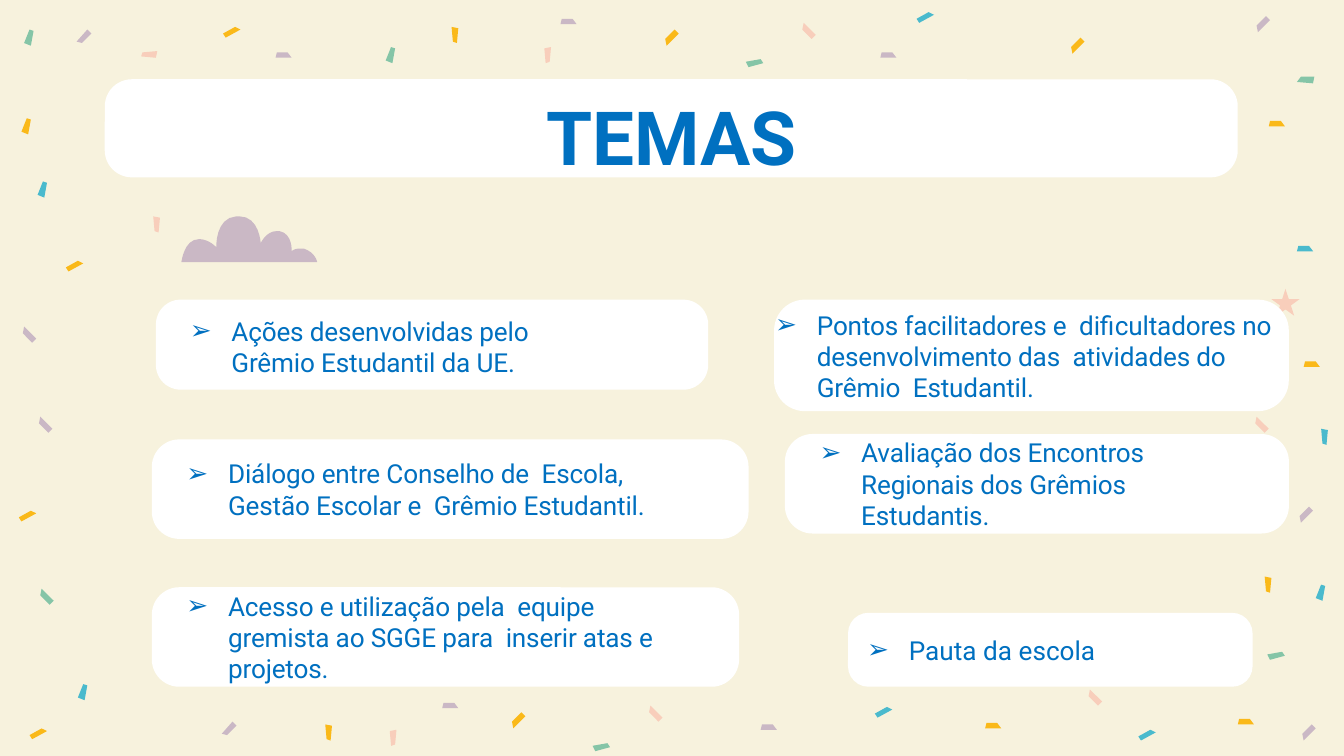
from pptx import Presentation
from pptx.dml.color import RGBColor
from pptx.enum import shapes as kinds, text as txt
from pptx.oxml import parse_xml
from pptx.oxml.ns import nsdecls
from pptx.util import Inches, Pt

CREAM = RGBColor(0xF7, 0xF2, 0xDD)
WHITE = RGBColor(0xFF, 0xFF, 0xFF)
BLUE = RGBColor(0x00, 0x70, 0xC0)
MAUVE = RGBColor(0xCA, 0xB8, 0xC5)
PINK = RGBColor(0xF8, 0xCE, 0xBB)
YELLOW = RGBColor(0xFA, 0xB9, 0x19)
GREEN = RGBColor(0x85, 0xC5, 0xA7)
TEAL = RGBColor(0x4A, 0xBA, 0xCD)

FONT = "Roboto"
CORNER = 0.276

# Outlines of the confetti pieces, around their centres.
FLAT = [(-.05, -.02), (.03, -.02), (.06, .02), (-.06, .02)]
FALLING = [(.03, .06), (-.04, -.01), (-.03, -.06), (.06, .03)]
RISING = [(x, -y) for x, y in FALLING]
RISING_BACK = [(.06, -.03), (-.01, .04), (-.05, .03), (.03, -.06)]
GENTLE = [(-.06, .02), (.03, -.03), (.07, -.01), (-.04, .05)]
LEANING = [(-.04, .04), (0, -.06), (.03, -.05), (.01, .06)]
UPRIGHT = [(.03, -.05), (.02, .06), (-.01, .05), (-.02, -.06)]
UPRIGHT_BACK = [(-x, y) for x, y in UPRIGHT]
LEVEL = [(-.04, .04), (.07, .01), (.05, -.02), (-.06, 0)]
TIPPED = [(.07, -.02), (-.03, -.02), (-.06, .02), (.06, .03)]
WIDE = [(.05, .03), (-.06, .02), (-.05, -.01), (.06, -.02)]

CONFETTI = [
    (FLAT, MAUVE, [(4.23, .16), (2.11, .41), (6.61, .41), (3.35, 5.25), (5.72, 5.41)]),
    (FLAT, YELLOW, [(9.5, .92), (9.76, 2.71), (7.39, 5.4), (9.27, 5.37)]),
    (FLAT, TEAL, [(9.71, 1.85)]),
    (FALLING, MAUVE, [(.33, 3.16), (.21, 2.49)]),
    (FALLING, PINK, [(6.01, .23), (9.38, 3.16), (4.87, 5.31), (8.14, 5.19)]),
    (FALLING, GREEN, [(.34, 4.44)]),
    (RISING, YELLOW, [(4.99, .28), (8.01, .34), (3.85, 5.36)]),
    (RISING, MAUVE, [(9.39, .18), (9.71, 3.83), (9.73, 5.45)]),
    (RISING_BACK, MAUVE, [(.62, .28), (1.7, 5.43)]),
    (GENTLE, YELLOW, [(1.72, .23), (.55, 1.97), (.2, 3.83), (.28, 5.45)]),
    (GENTLE, TEAL, [(6.88, .12), (6.57, 5.29), (8.53, 5.46)]),
    (LEANING, YELLOW, [(.2, .94)]),
    (LEANING, GREEN, [(.22, .28), (2.91, .41)]),
    (LEANING, TEAL, [(.32, 1.41), (.62, 5.15), (9.83, 4.41)]),
    (UPRIGHT, YELLOW, [(3.38, .26), (2.44, 5.45), (9.43, 4.35)]),
    (UPRIGHT, PINK, [(1.16, 1.67)]),
    (UPRIGHT, TEAL, [(9.85, 3.25)]),
    (UPRIGHT_BACK, PINK, [(4.08, .41), (2.93, 5.49)]),
    (LEVEL, GREEN, [(5.61, .46), (4.47, 5.55), (9.49, 4.87)]),
    (TIPPED, GREEN, [(9.71, .59)]),
    (WIDE, PINK, [(1.11, .4)]),
]

# Bézier segments, from the top of the cloud: two handles and an end point.
CLOUD_BOX = (1.35, 1.61, 1.02, .34)
CLOUD_TOP = (.43, 0)
CLOUD_CURVES = [
    ((.42, 0), (.42, 0), (.41, 0)), ((.25, .01), (.26, .23), (.26, .23)),
    ((.21, .18), (.16, .17), (.13, .17)), ((.02, .17), (0, .34), (0, .34)),
    ((.34, .34), (.68, .34), (1.01, .34)), ((1.01, .34), (1, .27), (.91, .24)),
    ((.89, .24), (.88, .24), (.88, .24)), ((.84, .24), (.82, .26), (.82, .26)),
    ((.82, .26), (.83, .13), (.73, .11)), ((.72, .11), (.72, .11), (.71, .11)),
    ((.63, .11), (.59, .2), (.59, .2)), ((.59, .2), (.58, 0), (.43, 0)),
]

# Box, text, and the insets that set where the lines break.
THEMES = [
    ((1.16, 2.23, 4.11, .67), "Ações desenvolvidas pelo Grêmio Estudantil da UE.",
     dict(right=.92, top=.13)),
    ((1.13, 3.27, 4.44, .74),
     "Diálogo entre Conselho de  Escola, Gestão Escolar e  Grêmio Estudantil.",
     dict(right=.45)),
    ((1.13, 4.37, 4.37, .74),
     "Acesso e utilização pela  equipe gremista ao SGGE para  inserir atas e projetos.",
     dict(right=.4)),
    ((5.84, 3.23, 3.75, .74),
     "Avaliação dos Encontros Regionais dos Grêmios Estudantis.", dict(right=.65)),
    ((6.31, 4.56, 3.01, .55), "Pauta da escola", dict(margin=.31, spacing=0)),
]


def paint(shape, color):
    shape.fill.solid()
    shape.fill.fore_color.rgb = color
    shape.line.fill.background()
    shape.shadow.inherit = False


def add_outline(slide, points, color):
    start, *rest = [(Inches(x), Inches(y)) for x, y in points]
    builder = slide.shapes.build_freeform(*start)
    builder.add_line_segments(rest, close=True)
    paint(builder.convert_to_shape(), color)


def add_preset(slide, kind, box, color):
    shape = slide.shapes.add_shape(kind, *map(Inches, box))
    paint(shape, color)
    return shape


def add_card(slide, box):
    card = add_preset(slide, kinds.MSO_SHAPE.ROUNDED_RECTANGLE, box, WHITE)
    card.adjustments[0] = CORNER
    return card


def write(shape, content, size=14, bold=False, align=txt.PP_ALIGN.LEFT,
          anchor=txt.MSO_ANCHOR.MIDDLE, left=.1, top=.1, right=.1, bottom=.1,
          bullet=True, margin=.41, spacing=-10):
    """Fill the shape with one paragraph; spacing is in hundredths of a point."""
    frame = shape.text_frame
    frame.word_wrap = True
    frame.vertical_anchor = anchor
    frame.margin_left, frame.margin_top = Inches(left), Inches(top)
    frame.margin_right, frame.margin_bottom = Inches(right), Inches(bottom)
    paragraph = frame.paragraphs[0]
    paragraph.alignment = align
    run = paragraph.add_run()
    run.text = content
    run.font.name, run.font.size, run.font.bold = FONT, Pt(size), bold
    run.font.color.rgb = BLUE
    if spacing:
        run._r.get_or_add_rPr().set("spc", str(spacing))
    if bullet:
        props = paragraph._p.get_or_add_pPr()
        props.set("marL", str(Inches(margin)))
        props.set("indent", str(Inches(-.31)))
        ns = nsdecls("a")
        for xml in (f'<a:buClr {ns}><a:srgbClr val="{BLUE}"/></a:buClr>',
                    f'<a:buFont {ns} typeface="{FONT}"/>',
                    f'<a:buChar {ns} char="➢"/>'):
            props.append(parse_xml(xml))


def add_confetti(slide):
    for outline, color, centres in CONFETTI:
        for cx, cy in centres:
            add_outline(slide, [(cx + x, cy + y) for x, y in outline], color)
    star = add_preset(slide, kinds.MSO_SHAPE.STAR_5_POINT, (9.46, 2.15, .21, .2), PINK)
    star.adjustments[0] = .191


def add_cloud(slide, box, steps=8):
    """Trace the Bézier curves of the cloud with short straight lines."""
    left, top = box[:2]
    points = [CLOUD_TOP]
    for a, b, end in CLOUD_CURVES:
        start = points[-1]
        for step in range(1, steps + 1):
            t = step / steps
            weights = ((1 - t) ** 3, 3 * t * (1 - t) ** 2, 3 * t * t * (1 - t), t ** 3)
            points.append(tuple(sum(w * p[axis] for w, p in zip(weights, (start, a, b, end)))
                                for axis in (0, 1)))
    add_outline(slide, [(left + x, top + y) for x, y in points], MAUVE)


def add_heading(slide, box):
    left, top, width, _ = box
    add_card(slide, box)
    title = slide.shapes.add_textbox(Inches(left + 2.12), Inches(top - .01),
                                     Inches(width - 4.24), Inches(.67))
    write(title, "TEMAS", size=40, bold=True, align=txt.PP_ALIGN.CENTER,
          anchor=txt.MSO_ANCHOR.TOP, bullet=False, spacing=0)


def add_highlights(slide, box):
    """Card whose text lies in a wider box of its own."""
    left, top, _, height = box
    add_card(slide, box)
    label = slide.shapes.add_textbox(Inches(left - .19), Inches(top + .02),
                                     Inches(5), Inches(height - .02))
    write(label, "Pontos facilitadores e  dificultadores no desenvolvimento das  "
          "atividades do Grêmio  Estudantil.", anchor=txt.MSO_ANCHOR.TOP,
          top=.05, bottom=.05, right=.97)


def main():
    deck = Presentation()
    deck.slide_width = Inches(10)
    deck.slide_height = deck.slide_width * 9 // 16
    slide = deck.slides.add_slide(deck.slide_layouts[6])
    slide.background.fill.solid()
    slide.background.fill.fore_color.rgb = CREAM
    add_confetti(slide)
    add_heading(slide, (.78, .59, 8.43, .73))
    add_cloud(slide, CLOUD_BOX)
    for box, content, layout in THEMES:
        write(add_card(slide, box), content, **layout)
    add_highlights(slide, (5.76, 2.23, 3.83, .83))
    deck.save("out.pptx")


if __name__ == "__main__":
    main()
